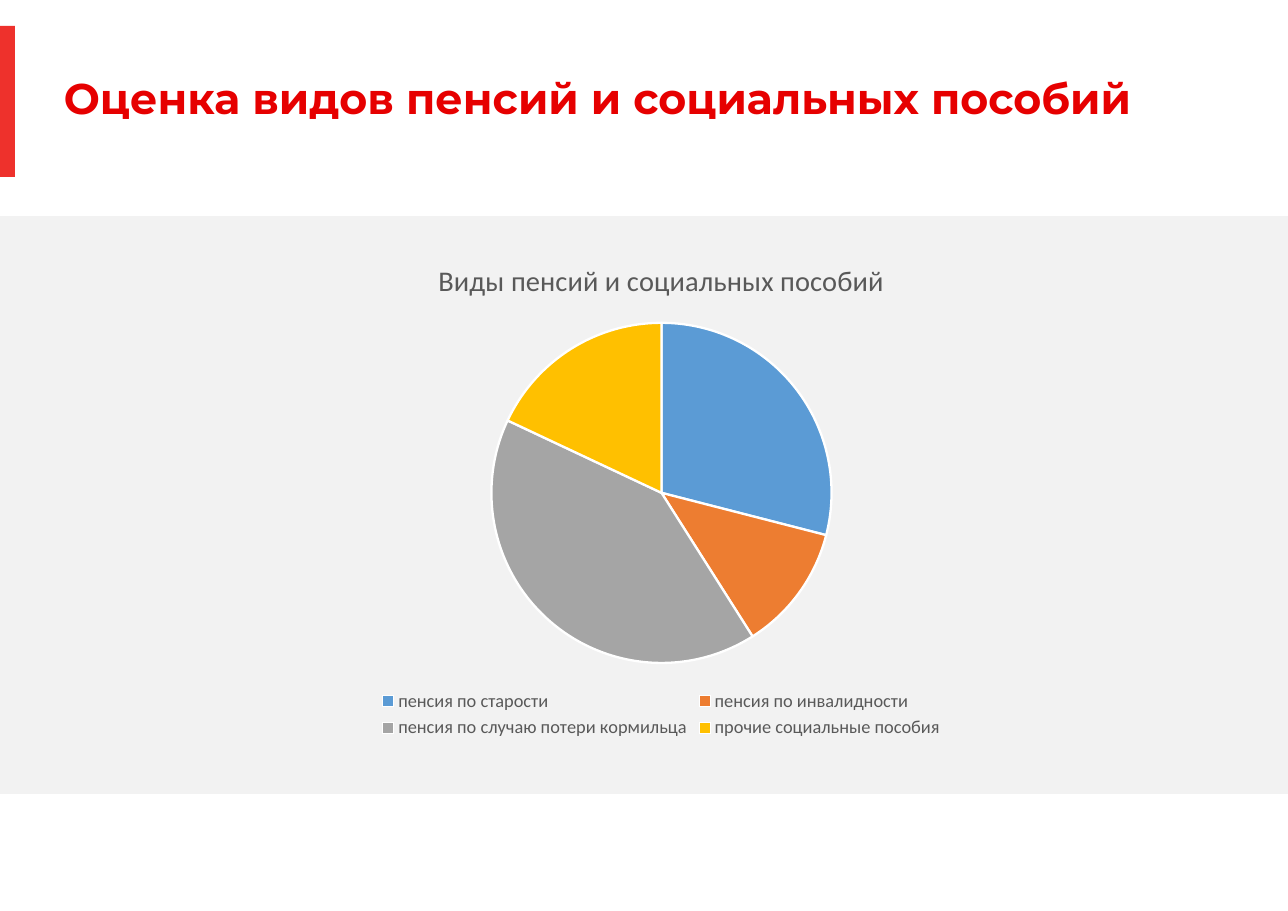
from pptx import Presentation
from pptx.chart.data import CategoryChartData
from pptx.dml.color import RGBColor
from pptx.enum.chart import XL_CHART_TYPE as ChartType, XL_LEGEND_POSITION as LegendPosition
from pptx.enum.shapes import MSO_SHAPE as Shape
from pptx.enum.text import MSO_ANCHOR as Anchor
from pptx.util import Pt

PX = 8298  # EMU per pixel

WHITE = RGBColor(0xFF, 0xFF, 0xFF)
PALE_GRAY = RGBColor(0xF2, 0xF2, 0xF2)
MARK_RED = RGBColor(0xEE, 0x31, 0x2C)
TITLE_RED = RGBColor(0xE6, 0x00, 0x00)
DARK_GRAY = RGBColor(0x59, 0x59, 0x59)
BLUE = RGBColor(0x5B, 0x9B, 0xD5)
ORANGE = RGBColor(0xED, 0x7D, 0x31)
GRAY = RGBColor(0xA5, 0xA5, 0xA5)
YELLOW = RGBColor(0xFF, 0xC0, 0x00)


def write(frame, text, *, size, color, font, bold=False, line_spacing=None):
    paragraph = frame.paragraphs[0]
    paragraph.line_spacing = line_spacing
    run = paragraph.add_run()
    run.text = text
    run.font.size = Pt(size)
    run.font.color.rgb = color
    run.font.name = font
    run.font.bold = bold


deck = Presentation()
deck.slide_width, deck.slide_height = 1288 * PX, 911 * PX
slide = deck.slides.add_slide(deck.slide_layouts[6])

# Gray band and red mark
for left, top, width, height, color in (
    (0, 216, 1288, 578, PALE_GRAY),
    (0, 26, 15, 151, MARK_RED),
):
    block = slide.shapes.add_shape(Shape.RECTANGLE, left * PX, top * PX, width * PX, height * PX)
    block.shadow.inherit = False
    block.fill.solid()
    block.fill.fore_color.rgb = color
    block.line.fill.background()

# Heading
heading = slide.shapes.add_textbox(64 * PX, 78 * PX, 1167 * PX, 46 * PX).text_frame
heading.word_wrap = True
heading.vertical_anchor = Anchor.MIDDLE
heading.margin_left = heading.margin_right = heading.margin_top = heading.margin_bottom = 0
write(heading, "Оценка видов пенсий и социальных пособий",
      size=28, color=TITLE_RED, font="Montserrat", bold=True, line_spacing=0.9)

# Pie of benefits
benefits = (
    ("пенсия по старости", 29, BLUE),
    ("пенсия по инвалидности", 12, ORANGE),
    ("пенсия по случаю потери кормильца", 41, GRAY),
    ("прочие социальные пособия", 18, YELLOW),
)
shares = CategoryChartData()
shares.categories = [name for name, _, _ in benefits]
shares.add_series("Series 1", [share for _, share, _ in benefits])
pie = slide.shapes.add_chart(ChartType.PIE, 271 * PX, 239 * PX, 781 * PX, 504 * PX, shares).chart
pie.font.name = "Calibri"
pie.font.size = Pt(10)
pie.has_title = True
write(pie.chart_title.text_frame, "Виды пенсий и социальных пособий",
      size=18.6, color=DARK_GRAY, font="Calibri")
pie.chart_title.include_in_layout = False

# Slices
pie.plots[0].vary_by_categories = True
for index, (_, _, color) in enumerate(benefits):
    piece = pie.plots[0].series[0].points[index].format
    piece.fill.solid()
    piece.fill.fore_color.rgb = color
    piece.line.color.rgb = WHITE
    piece.line.width = Pt(1.5)

# Legend
pie.has_legend = True
pie.legend.position = LegendPosition.BOTTOM
pie.legend.include_in_layout = False
pie.legend.font.name = "Calibri"
pie.legend.font.size = Pt(12)
pie.legend.font.color.rgb = DARK_GRAY

deck.save("out.pptx")
